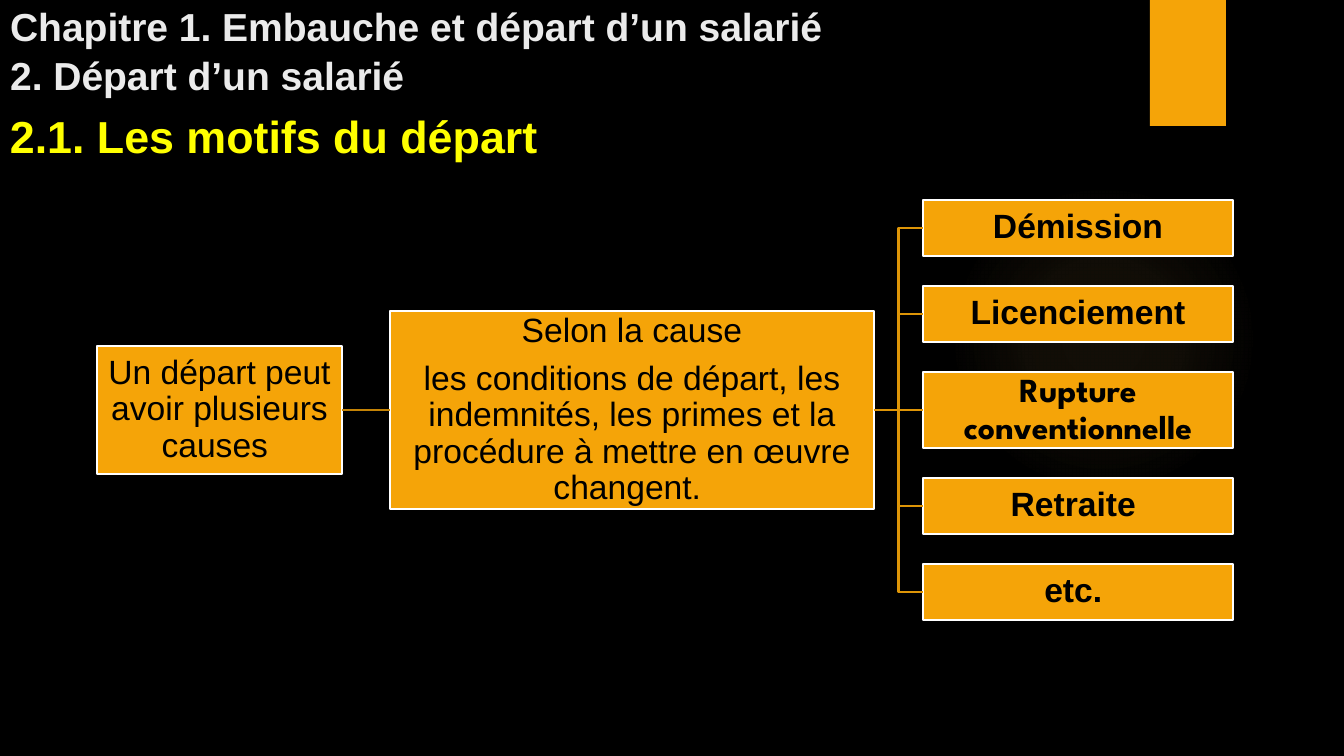
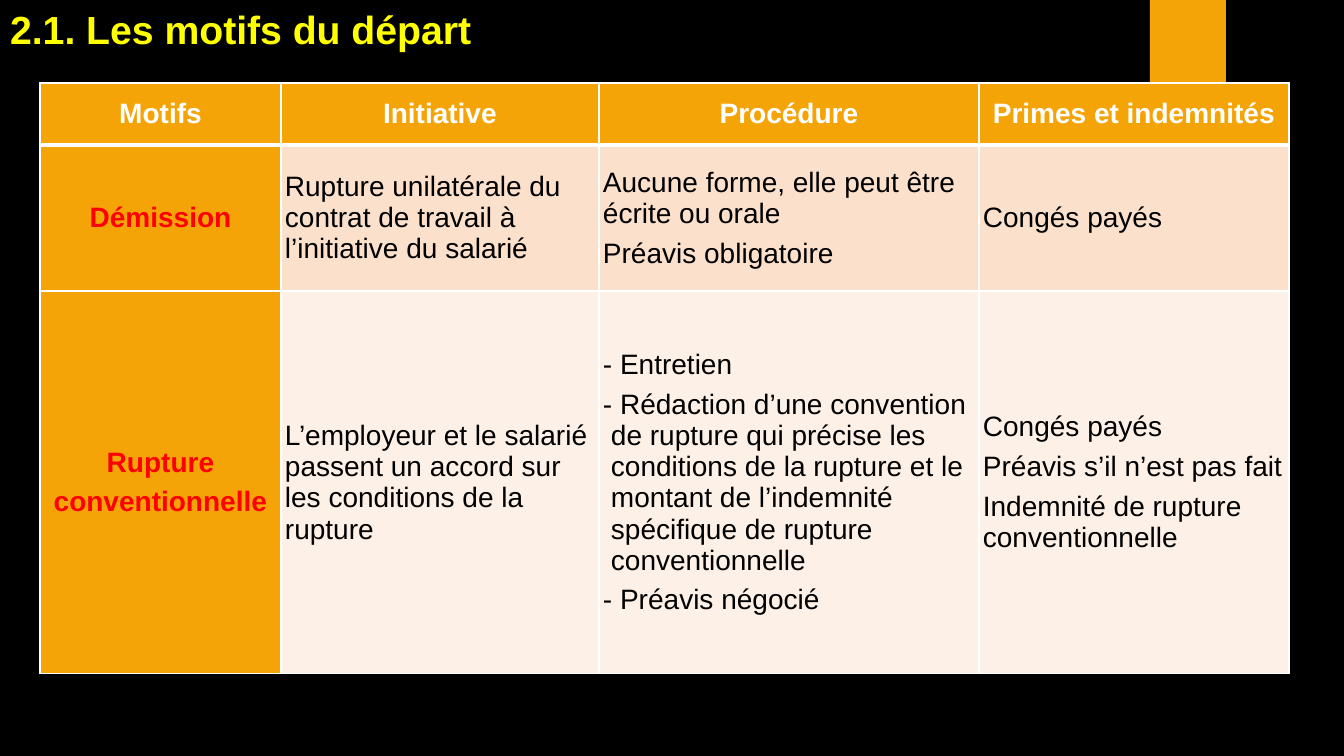
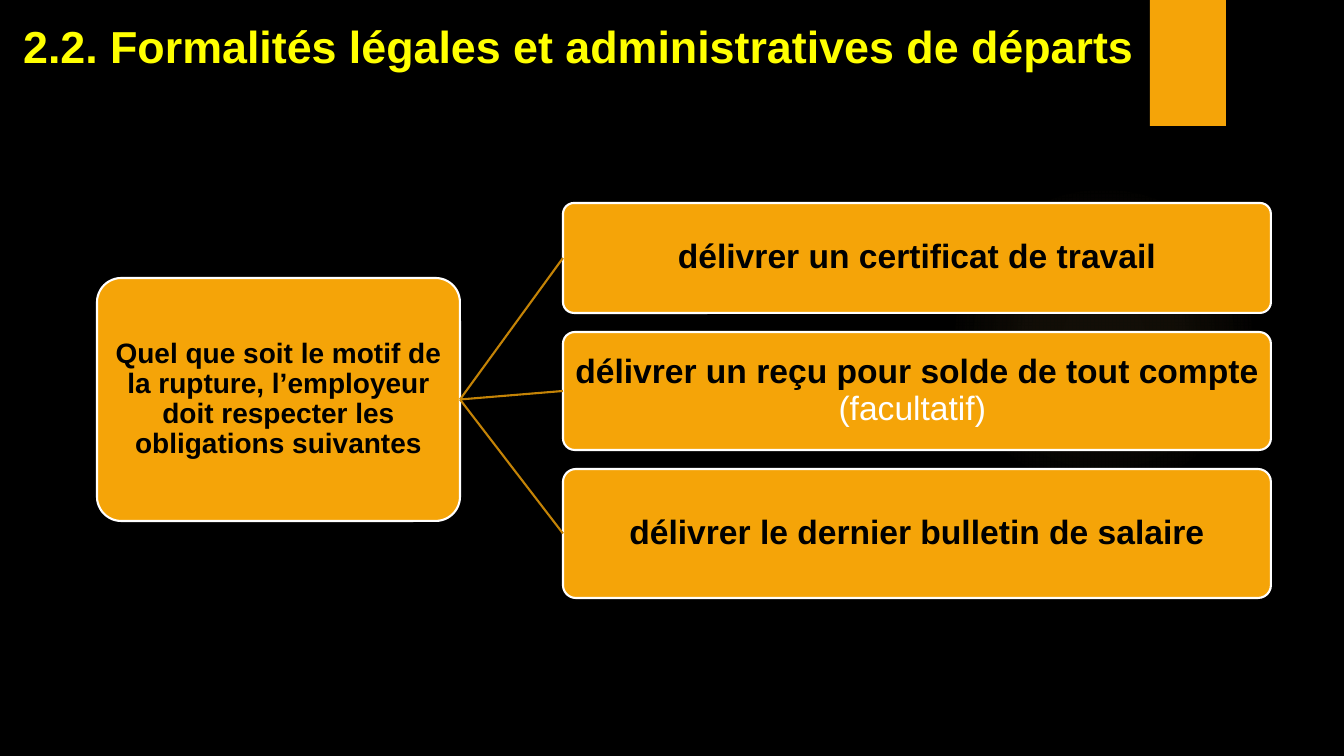
"""Build three slides on how an employee leaves a company."""
from pptx import Presentation
from pptx import util as u
from pptx.dml.color import RGBColor
from pptx.enum import shapes, text
from pptx.oxml import parse_xml
from pptx.oxml.ns import nsdecls

BLACK = RGBColor(0x00, 0x00, 0x00)
WHITE = RGBColor(0xFF, 0xFF, 0xFF)
LIGHT_GREY = RGBColor(0xEB, 0xEB, 0xEB)
YELLOW = RGBColor(0xFF, 0xFF, 0x00)
RED = RGBColor(0xFF, 0x00, 0x00)
ORANGE = RGBColor(0xF5, 0xA4, 0x08)
GLOW = RGBColor(0xFA, 0xC9, 0x6A)
BRANCH = RGBColor(0xDE, 0x95, 0x07)
DARK_BRANCH = RGBColor(0xC4, 0x83, 0x06)
PEACH = RGBColor(0xFB, 0xE0, 0xCC)
PALE_PEACH = RGBColor(0xFD, 0xF0, 0xE7)

SLIDE_WIDTH, SLIDE_HEIGHT = 1344, 756
SCALE = 12192000 / SLIDE_WIDTH
FONT = "Arial"
RIGHT_SIDE, LEFT_SIDE = 3, 1
CENTER, LEFT, JUSTIFY = text.PP_ALIGN.CENTER, text.PP_ALIGN.LEFT, text.PP_ALIGN.JUSTIFY


def px(length):
    return u.Emu(round(length * SCALE))


class Deck:
    def __init__(self):
        self.presentation = Presentation()
        self.presentation.slide_width = px(SLIDE_WIDTH)
        self.presentation.slide_height = px(SLIDE_HEIGHT)
        self.layout = self.presentation.slide_layouts[5]
        self.slide = None
        fill = self.presentation.slide_master.background.fill
        fill.solid()
        fill.fore_color.rgb = BLACK
        for placeholder in list(self.layout.placeholders):
            if placeholder.placeholder_format.idx:
                placeholder.element.getparent().remove(placeholder.element)

    def new_slide(self):
        first = self.slide is None
        self.slide = self.presentation.slides.add_slide(self.layout)
        if first:
            self.decorate_layout()

    def decorate_layout(self):
        glow = self.shape(shapes.MSO_SHAPE.OVAL, 949, 184, 310, 310)
        stops = "".join(
            f'<a:gs pos="{position}000"><a:srgbClr val="{GLOW}">'
            f'<a:alpha val="{alpha}000"/></a:srgbClr></a:gs>'
            for position, alpha in ((0, 7), (36, 6), (69, 0)))
        gradient = parse_xml(
            f'<a:gradFill {nsdecls("a")}><a:gsLst>{stops}</a:gsLst><a:path path="circle">'
            '<a:fillToRect l="50000" t="50000" r="50000" b="50000"/></a:path></a:gradFill>')
        solid = glow.element.spPr.find(".//{*}solidFill")
        solid.getparent().replace(solid, gradient)
        band = self.shape(shapes.MSO_SHAPE.RECTANGLE, 1150, 0, 76, 126)
        for shape in (band, glow):
            self.layout.shapes.element.insert(2, shape.element)

    def shape(self, kind, left, top, width, height, line=None):
        shape = self.slide.shapes.add_shape(kind, px(left), px(top), px(width), px(height))
        shape.shadow.inherit = False
        shape.fill.solid()
        shape.fill.fore_color.rgb = ORANGE
        if line is None:
            shape.line.fill.background()
        else:
            shape.line.color.rgb = line
            shape.line.width = u.Pt(1.5)
        return shape

    def set_text(self, frame, lines, size, color, bold=False, align=LEFT, gap=0, spacing=None,
                 font=FONT):
        for index, line in enumerate(lines):
            paragraph = frame.add_paragraph() if index else frame.paragraphs[0]
            paragraph.text = line
            if line.startswith("- "):
                properties = paragraph._p.get_or_add_pPr()
                properties.set("marL", str(px(8)))
                properties.set("indent", str(px(-8)))
            paragraph.alignment = align
            if index:
                paragraph.space_before = u.Pt(gap)
            if spacing:
                paragraph.line_spacing = spacing
            paragraph.font.name = font
            paragraph.font.size = u.Pt(size)
            paragraph.font.bold = bold
            paragraph.font.color.rgb = color

    def heading(self, shape, lines, left, top, width, height, size,
                color=YELLOW, align=JUSTIFY, anchor=text.MSO_ANCHOR.TOP):
        shape.left, shape.top, shape.width, shape.height = map(px, (left, top, width, height))
        frame = shape.text_frame
        frame.word_wrap = True
        frame.auto_size = text.MSO_AUTO_SIZE.NONE
        frame.vertical_anchor = anchor
        self.set_text(frame, lines, size, color, True, align, gap=1.5)

    def title(self, lines, *place, **style):
        self.heading(self.slide.shapes.title, lines, *place, **style)

    def subtitle(self, lines, *place):
        self.heading(self.slide.shapes.add_textbox(0, 0, 0, 0), lines, *place)

    def box(self, lines, left, top, width, height, size=24, bold=True, font=FONT, rounded=False):
        kind = shapes.MSO_SHAPE.ROUNDED_RECTANGLE if rounded else shapes.MSO_SHAPE.RECTANGLE
        box = self.shape(kind, left, top, width, height, WHITE)
        if rounded:
            box.adjustments[0] = 0.1
        frame = box.text_frame
        frame.word_wrap = True
        frame.vertical_anchor = text.MSO_ANCHOR.MIDDLE
        frame.margin_left = frame.margin_right = frame.margin_top = frame.margin_bottom = px(2)
        self.set_text(frame, lines, size, BLACK, bold, CENTER, gap=8.6, spacing=0.9, font=font)
        return box

    def stack(self, items, left, top, width, gap, **style):
        boxes = []
        for line, height, font in items:
            boxes.append(self.box([line], left, top, width, height, font=font, **style))
            top += height + gap
        return boxes

    def link(self, source, target, color, kind=shapes.MSO_CONNECTOR.STRAIGHT):
        connector = self.slide.shapes.add_connector(kind, 0, 0, 0, 0)
        connector.begin_connect(source, RIGHT_SIDE)
        connector.end_connect(target, LEFT_SIDE)
        connector.line.color.rgb = color
        connector.line.width = u.Pt(1.5)
        connector.element.spPr.append(parse_xml(f'<a:effectLst {nsdecls("a")}/>'))

    def borders(self, cell, bottom):
        properties = cell._tc.get_or_add_tcPr()
        for index, (side, width) in enumerate((("L", 1), ("R", 1), ("T", 1), ("B", bottom))):
            properties.insert(index, parse_xml(
                f'<a:ln{side} {nsdecls("a")} w="{u.Pt(width)}"><a:solidFill>'
                f'<a:srgbClr val="{WHITE}"/></a:solidFill></a:ln{side}>'))

    def table(self, rows, left, top, widths, heights):
        table = self.slide.shapes.add_table(
            len(rows), len(widths), px(left), px(top), px(sum(widths)), px(sum(heights))).table
        for column, width in zip(table.columns, widths):
            column.width = px(width)
        for row, height in zip(table.rows, heights):
            row.height = px(height)
        for row_index, row in enumerate(rows):
            for column_index, lines in enumerate(row):
                cell = table.cell(row_index, column_index)
                header = row_index == 0
                label = header or column_index == 0
                cell.margin_left = cell.margin_right = px(4)
                cell.margin_top = cell.margin_bottom = 0
                cell.vertical_anchor = text.MSO_ANCHOR.MIDDLE
                cell.fill.solid()
                cell.fill.fore_color.rgb = (
                    ORANGE if label else PEACH if row_index % 2 else PALE_PEACH)
                self.borders(cell, 3 if header else 1)
                self.set_text(cell.text_frame, lines, 20,
                              WHITE if header else RED if label else BLACK,
                              label, CENTER if label else LEFT, gap=6)


def reasons_slide(deck):
    deck.new_slide()
    deck.title(["Chapitre 1. Embauche et départ d’un salarié", "2. Départ d’un salarié"],
               0, 31, 1132, 72, 27.9, color=LIGHT_GREY, align=LEFT,
               anchor=text.MSO_ANCHOR.BOTTOM)
    deck.subtitle(["2.1. Les motifs du départ"], 0, 104, 729, 64, 32)
    causes = deck.box(["Un départ peut avoir plusieurs causes "], 97, 346, 245, 128, bold=False)
    conditions = deck.box(
        ["Selon la cause",
         "les conditions de départ, les indemnités, les primes et la procédure "
         "à mettre en œuvre changent. "],
        390, 311, 484, 198, bold=False)
    reasons = deck.stack(
        [("Démission", 56, FONT), ("Licenciement", 56, FONT),
         ("Rupture conventionnelle", 76, "League Spartan"),
         ("Retraite ", 56, FONT), ("etc. ", 56, FONT)],
        923, 200, 310, 30)
    deck.link(causes, conditions, DARK_BRANCH)
    for index, reason in enumerate(reasons):
        straight = index == len(reasons) // 2
        deck.link(conditions, reason, BRANCH,
                  shapes.MSO_CONNECTOR.STRAIGHT if straight else shapes.MSO_CONNECTOR.ELBOW)


def comparison_slide(deck):
    deck.new_slide()
    deck.title(["2.1. Les motifs du départ"], 0, 0, 729, 57, 28)
    deck.table([
        [["Motifs"], ["Initiative"], ["Procédure"], ["Primes et indemnités"]],
        [["Démission"],
         ["Rupture unilatérale du contrat de travail à l’initiative du salarié"],
         ["Aucune forme, elle peut être écrite ou orale", "Préavis obligatoire"],
         ["Congés payés"]],
        [["Rupture", "conventionnelle"],
         ["L’employeur et le salarié passent un accord sur les conditions de la rupture"],
         ["- Entretien",
          "- Rédaction d’une convention de rupture qui précise les conditions de la rupture "
          "et le montant de l’indemnité spécifique de rupture conventionnelle",
          "- Préavis négocié"],
         ["Congés payés", "Préavis s’il n’est pas fait",
          "Indemnité de rupture conventionnelle"]],
    ], 40, 83, (241, 318, 380, 310), (62, 146, 383))


def formalities_slide(deck):
    deck.new_slide()
    deck.title(["2.2. Formalités légales et administratives de départs"], 13, 14, 1240, 64, 32)
    employer = deck.box(
        ["Quel que soit le motif de la rupture, l’employeur doit respecter "
         "les obligations suivantes"],
        97, 278, 363, 243, size=20, rounded=True)
    duties = deck.stack(
        [("délivrer un certificat de travail", 110, FONT),
         ("délivrer un reçu pour solde de tout compte ", 118, FONT),
         ("délivrer le dernier bulletin de salaire", 129, FONT)],
        563, 203, 708, 19, rounded=True)
    optional = duties[1].text_frame.paragraphs[0].add_run()
    optional.text = "(facultatif) "
    optional.font.bold = False
    optional.font.color.rgb = WHITE
    for duty in duties:
        deck.link(employer, duty, DARK_BRANCH)


def main():
    deck = Deck()
    for build in (reasons_slide, comparison_slide, formalities_slide):
        build(deck)
    deck.presentation.save("out.pptx")


if __name__ == "__main__":
    main()
